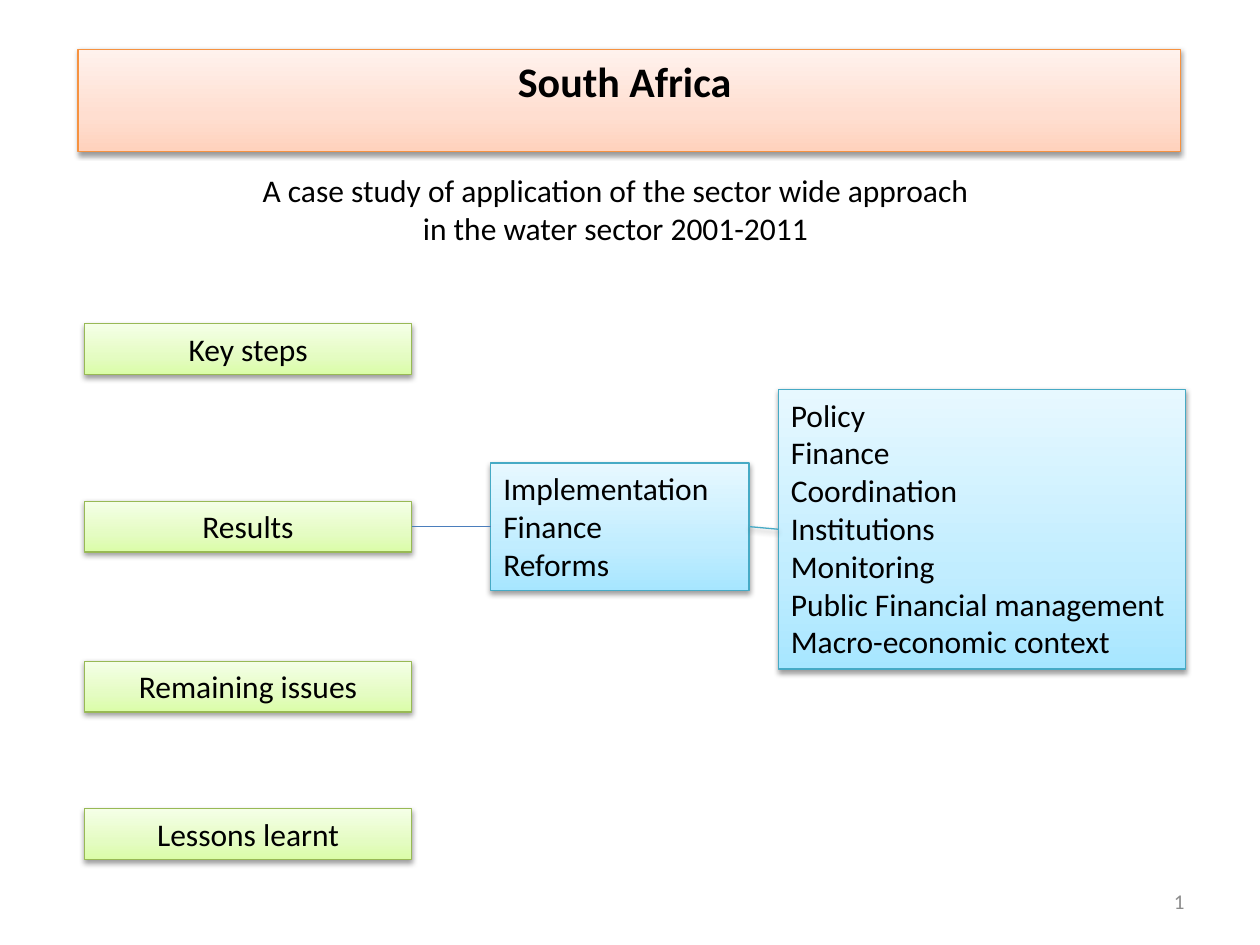
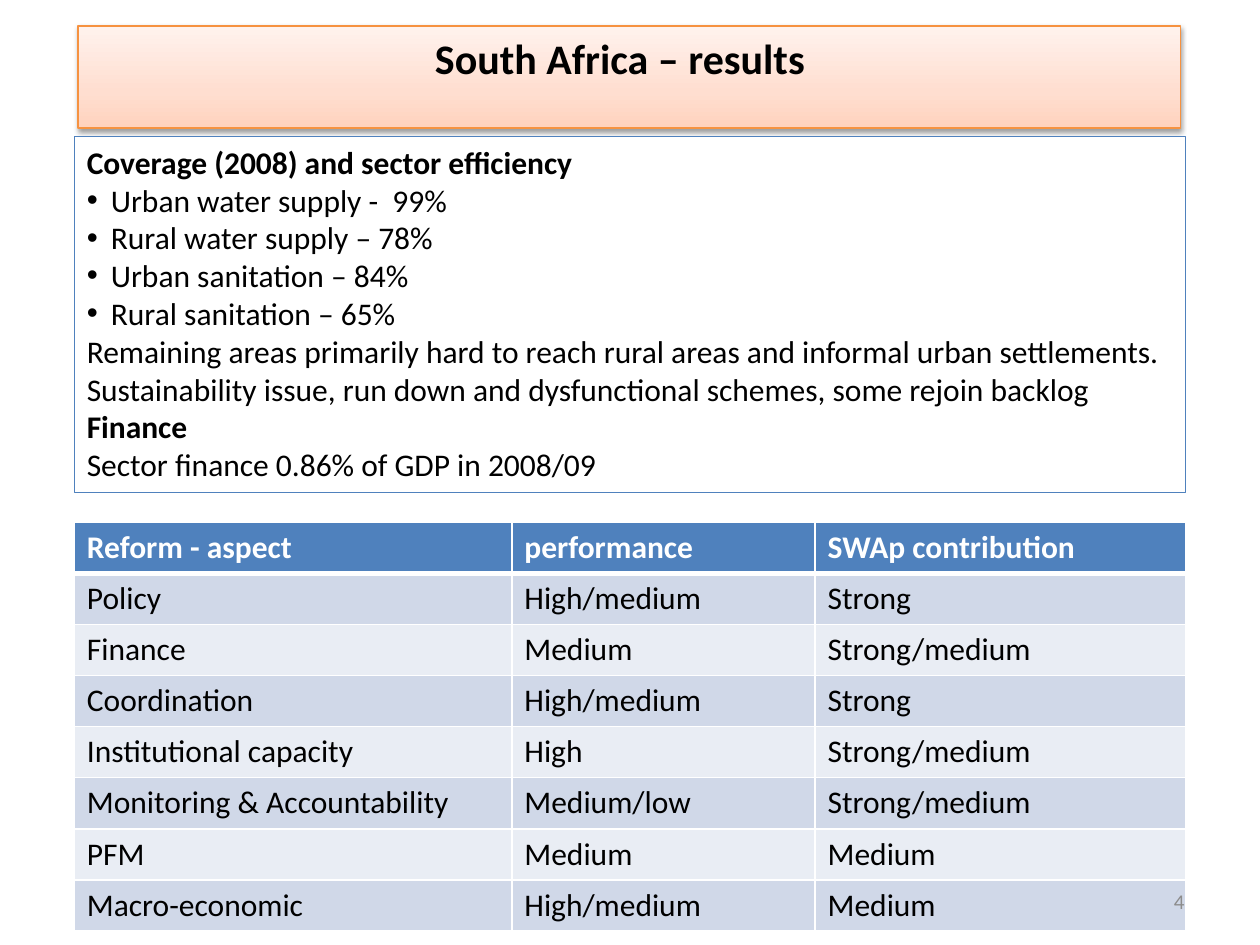
"""Build two slides on the water sector case study of South Africa."""
from dataclasses import dataclass

from copy import deepcopy
from lxml import etree
from pptx import Presentation
from pptx import util as u
from pptx.dml.color import RGBColor
from pptx.enum import shapes, text
from pptx.oxml import ns

Pt = u.Pt
LEFT, MID, RIGHT = text.PP_ALIGN.LEFT, text.PP_ALIGN.CENTER, text.PP_ALIGN.RIGHT
TOP = text.MSO_ANCHOR.TOP


@dataclass(frozen=True)
class Theme:
    """Colours, type sizes and line widths of the deck."""
    font: str = "Calibri"
    head: int = 24
    body: int = 18
    foot: int = 12
    rule: float = 0.75
    ink: str = "000000"
    white: str = "FFFFFF"
    grey: str = "8C8C8C"
    blue: str = "4F81BD"
    link: str = "4B7EBC"
    teal: str = "46AAC5"
    rows: tuple = ("E9EDF4", "D0D8E8")
    peach: tuple = ("F69240", "FFD2BD", "FFDED0", "FFF2ED")
    lime: tuple = ("98B955", "DAFDA7", "E4FCC2", "F5FFE7")
    sky: tuple = ("46AAC5", "A7E6FF", "C1EDFF", "E7F8FF")


T = Theme()
STEPS = (("Key steps", 185), ("Results", 286.4), ("Remaining issues", 377.8),
         ("Lessons learnt", 462.2))
REFORMS = ("Implementation", "Finance", "Reforms")
ASPECTS = ("Policy", "Finance", "Coordination", "Institutions", "Monitoring",
           "Public Financial management", "Macro-economic context")
BOLD, DOT = {"bold": True}, {"dot": True}
NOTES = (
    ("Coverage (2008) and sector efficiency", BOLD),
    ("Urban water supply -  99%", DOT),
    ("Rural water supply – 78%", DOT),
    ("Urban sanitation – 84%", DOT),
    ("Rural sanitation – 65%", DOT),
    ("Remaining areas primarily hard to reach rural areas and informal urban "
     "settlements. Sustainability issue, run down and dysfunctional schemes, "
     "some rejoin backlog", {}),
    ("Finance", BOLD),
    ("Sector finance 0.86% of GDP in 2008/09", {}),
)
SCORES = (
    ("Reform - aspect", "performance", "SWAp contribution"),
    ("Policy", "High/medium", "Strong"),
    ("Finance", "Medium", "Strong/medium"),
    ("Coordination", "High/medium", "Strong"),
    ("Institutional capacity", "High", "Strong/medium"),
    ("Monitoring & Accountability", "Medium/low", "Strong/medium"),
    ("PFM", "Medium", "Medium"),
    ("Macro-economic", "High/medium", "Medium"),
)


def rgb(code):
    """Turn a hex code into a colour."""
    return RGBColor.from_string(code)


def node(root, tag, **attrs):
    """Add a drawing element under root."""
    return etree.SubElement(root, ns.qn("a:" + tag), attrs)


def write(frame, words, size=T.body, color=T.ink, bold=False, align=LEFT, dot=False):
    """Add one paragraph of formatted text to a frame."""
    para = frame.paragraphs[0]
    if para.runs:
        para = frame.add_paragraph()
    para.alignment = align
    if dot:
        props = para._p.get_or_add_pPr()
        props.set("marL", str(Pt(13.75)))
        props.set("indent", str(-Pt(13.75)))
        node(props, "buFont", typeface="Arial")
        node(props, "buChar", char="•")
    run = para.add_run()
    run.text = words
    font = run.font
    font.name, font.size, font.bold = T.font, Pt(size), bold
    font.color.rgb = rgb(color)


def setup(shape, anchor=TOP):
    """Make the text of a shape wrap at a fixed size and return its frame."""
    frame = shape.text_frame
    frame.word_wrap = True
    frame.auto_size = text.MSO_AUTO_SIZE.NONE
    frame.vertical_anchor = anchor
    return frame


def shade(shape, cast=True):
    """Give a shape a soft shadow below, or none."""
    effects = node(shape._element.spPr, "effectLst")
    if cast:
        drop = node(effects, "outerShdw", blurRad="40000", dist="20000",
                    dir="5400000", rotWithShape="0")
        node(node(drop, "srgbClr", val=T.ink), "alpha", val="38000")


def stroke(shape, color):
    """Draw the line of a shape."""
    shape.line.color.rgb = rgb(color)
    shape.line.width = Pt(T.rule)


def paint(shape, tones):
    """Fill a shape with an upward gradient, outlined and shadowed."""
    edge, *stops = tones
    fill = shape.fill
    fill.gradient()
    fill.gradient_angle = 90
    group = shape._element.spPr.find(".//" + ns.qn("a:gsLst"))
    group.append(deepcopy(group[-1]))
    for stop, tone, spot in zip(fill.gradient_stops, stops, (0, 0.35, 1)):
        stop.color.rgb = rgb(tone)
        stop.position = spot
    stroke(shape, edge)
    shade(shape)


def rect(slide, box):
    """Add a rectangle."""
    return slide.shapes.add_shape(shapes.MSO_SHAPE.RECTANGLE, *map(Pt, box))


def card(slide, box, lines, tones, align=LEFT):
    """Add a gradient rectangle with lines of text."""
    shape = rect(slide, box)
    paint(shape, tones)
    frame = setup(shape)
    for line in lines:
        write(frame, line, align=align)
    return shape


def label(slide, box, lines, anchor=TOP, **style):
    """Add a plain text box."""
    frame = setup(slide.shapes.add_textbox(*map(Pt, box)), anchor)
    for line in lines:
        write(frame, line, **style)
    return frame


def join(slide, start, end, sites, color, cast=False):
    """Connect two shapes at the given sites."""
    line = slide.shapes.add_connector(shapes.MSO_CONNECTOR.STRAIGHT, 0, 0, 0, 0)
    line.begin_connect(start, sites[0])
    line.end_connect(end, sites[1])
    stroke(line, color)
    shade(line, cast)


def banner(slide, top, words, inset):
    """Turn the title placeholder into the peach banner."""
    title = slide.shapes.title
    title.left, title.top, title.width, title.height = map(Pt, (44.6, top, 630.2, 58.3))
    paint(title, T.peach)
    frame = setup(title)
    frame.margin_right = Pt(inset)
    write(frame, words, size=T.head, bold=True, align=MID)


def number(slide, words):
    """Add the slide number at the lower right."""
    label(slide, (516, 500.5, 168, 28.75), [words], text.MSO_ANCHOR.MIDDLE,
          size=T.foot, color=T.grey, align=RIGHT)


def outline(slide, box):
    """Place the steps in a column with the two lists linked to Results."""
    left, top = box
    steps = {name: card(slide, (left, top + y, 187.2, 29.1), [name], T.lime, MID)
             for name, y in STEPS}
    aspects = card(slide, (left + 396.6, top + 222.5, 232.8, 159.9), ASPECTS, T.sky)
    reforms = card(slide, (left + 232.3, top + 264.6, 147.6, 72.7), REFORMS, T.sky)
    join(slide, steps["Results"], reforms, (3, 1), T.link)
    join(slide, aspects, reforms, (1, 3), T.teal, cast=True)


def notes(slide, box):
    """Place the framed findings."""
    shape = rect(slide, box)
    shape.fill.background()
    stroke(shape, T.blue)
    shade(shape, cast=False)
    frame = setup(shape)
    for words, style in NOTES:
        write(frame, words, **style)


def border(cell, row):
    """Draw white cell borders, thicker under the header row."""
    props = cell._tc.get_or_add_tcPr()
    for side in "LRTB":
        thick = (row, side) in ((0, "B"), (1, "T"))
        edge = node(props, "ln" + side, w=str(Pt(3 if thick else 1)))
        node(node(edge, "solidFill"), "srgbClr", val=T.white)


def scores(slide, box, widths):
    """Place the table of reform aspects."""
    grid = slide.shapes.add_table(len(SCORES), len(widths), *map(Pt, box)).table
    for col, width in zip(grid.columns, widths):
        col.width = Pt(width)
    for r, row in enumerate(SCORES):
        for c, words in enumerate(row):
            cell = grid.cell(r, c)
            border(cell, r)
            cell.fill.solid()
            cell.fill.fore_color.rgb = rgb(T.rows[r % 2] if r else T.blue)
            write(cell.text_frame, words, bold=r == 0,
                  color=T.ink if r else T.white)


def case(slide):
    """Build the overview slide."""
    banner(slide, 28.2, "South Africa", 12.6)
    outline(slide, (48.2, 0))
    frame = label(slide, (42.5, 94.3, 623.5, 72.7),
                  ("A case study of application of the sector wide approach",
                   "in the water sector 2001-2011"), align=MID)
    frame.margin_right = Pt(12)
    number(slide, "1")


def results(slide):
    """Build the results slide."""
    banner(slide, 14.8, "South Africa – results", 18)
    notes(slide, (42.5, 78, 635, 203.5))
    scores(slide, (42.5, 298.4, 635, 233.6), (250, 173.3, 211.7))
    number(slide, "4")


def main():
    """Build and save the deck."""
    deck = Presentation()
    deck.slide_width, deck.slide_height = Pt(720), Pt(540)
    for build in (case, results):
        build(deck.slides.add_slide(deck.slide_layouts[5]))
    deck.save("out.pptx")


if __name__ == "__main__":
    main()
